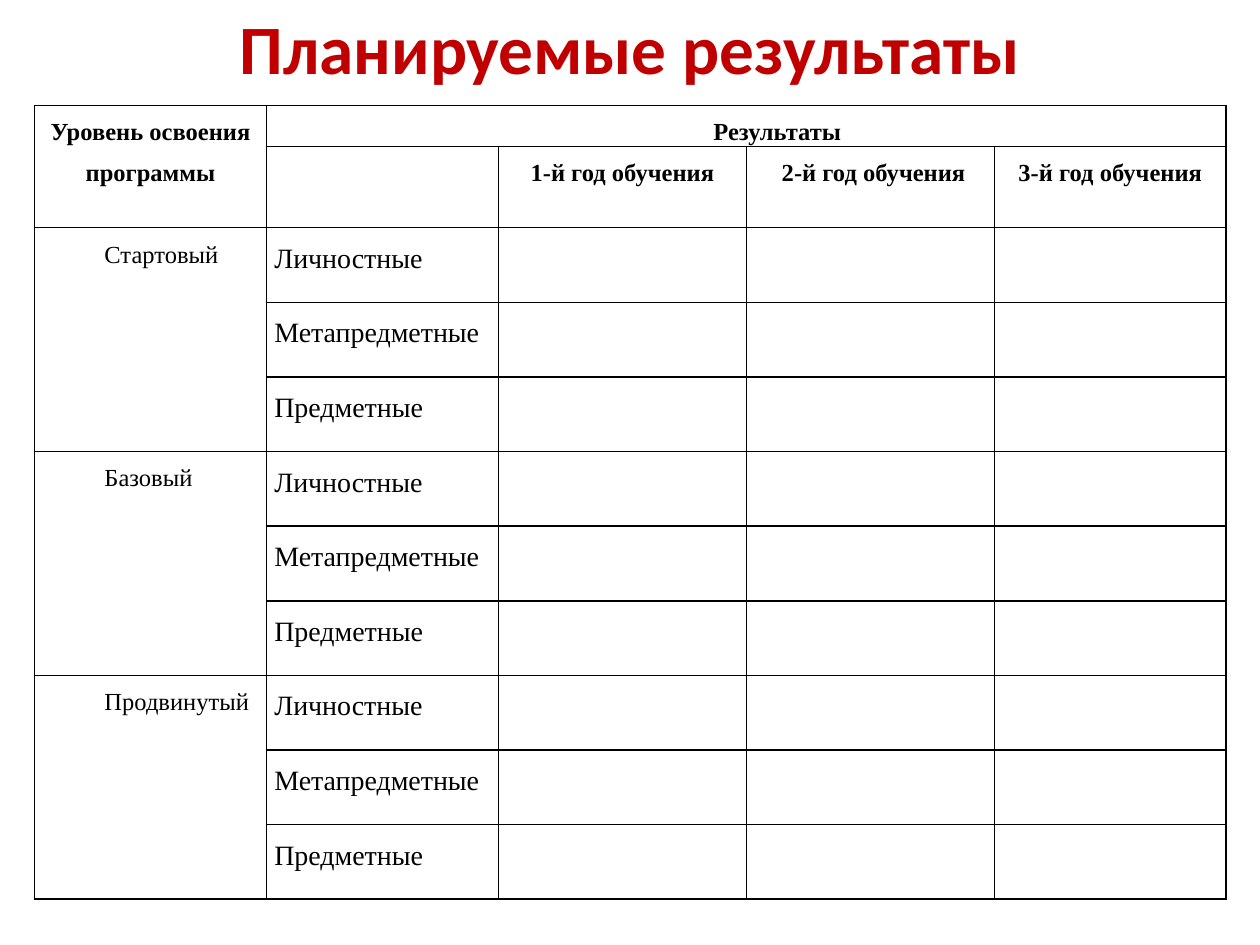
import pptx
import pptx.util
import pptx.dml.color
import pptx.enum.text
import pptx.oxml
import pptx.oxml.ns

Pt = pptx.util.Pt
RGB = pptx.dml.color.RGBColor.from_string
AL = pptx.enum.text.PP_ALIGN
COLORS = {"title": "C00000", "ink": "000000"}
INDENT = 35.4


def add_borders(cell):
    tcPr = cell._tc.get_or_add_tcPr()
    for i, side in enumerate(("lnL", "lnR", "lnT", "lnB")):
        ln = pptx.oxml.parse_xml(
            f'<a:{side} {pptx.oxml.ns.nsdecls("a")} w="{Pt(1)}"><a:solidFill>'
            f'<a:srgbClr val="{COLORS["ink"]}"/></a:solidFill></a:{side}>')
        tcPr.insert(i, ln)


def write(cell, text, size=14, bold=False, align=AL.LEFT, indent=0):
    p = cell.text_frame.paragraphs[0]
    p.text = text
    p.alignment = align
    p.line_spacing = 1.5
    if indent:
        pPr = p._p.get_or_add_pPr()
        pPr.set("marL", "0")
        pPr.set("indent", str(Pt(indent)))
    f = p.runs[0].font
    f.name, f.size, f.bold = "Times New Roman", Pt(size), bold
    f.color.rgb = RGB(COLORS["ink"])


prs = pptx.Presentation()
prs.slide_width, prs.slide_height = Pt(720), Pt(540)
s = prs.slides.add_slide(prs.slide_layouts[5])

# Title, lifted above the table by its bottom inset
sp = s.shapes.title
sp.left, sp.top, sp.width, sp.height = Pt(36), Pt(21.6), Pt(648), Pt(49.7)
tf = sp.text_frame
tf.text = "Планируемые результаты"
tf.margin_top, tf.margin_bottom = 0, Pt(40)
tf.vertical_anchor = pptx.enum.text.MSO_ANCHOR.MIDDLE
tf.paragraphs[0].alignment = AL.CENTER
f = tf.paragraphs[0].runs[0].font
f.name, f.size, f.bold = "Calibri", Pt(39.6), True
f.color.rgb = RGB(COLORS["title"])

# Table grid
levels = ["Стартовый", "Базовый", "Продвинутый"]
results = ["Личностные", "Метапредметные", "Предметные"]
years = ["1-й год обучения", " 2-й год обучения", "3-й год обучения"]
widths = [132.5, 132.5, 141.8, 141.8, 132.2]
heights = [23.4, 46.2] + [42.64] * (len(levels) * len(results))
tbl = s.shapes.add_table(len(heights), len(widths), Pt(19.8), Pt(60.3),
                         Pt(sum(widths)), Pt(sum(heights))).table
tbl.first_row = tbl.horz_banding = False
for col, w in zip(tbl.columns, widths):
    col.width = Pt(w)
for row, h in zip(tbl.rows, heights):
    row.height = Pt(h)
for cell in tbl.iter_cells():
    cell.fill.background()
    cell.margin_left = cell.margin_right = Pt(4.5)
    cell.margin_top = cell.margin_bottom = 0
    add_borders(cell)

# Header rows
tbl.cell(0, 0).merge(tbl.cell(1, 0))
tbl.cell(0, 1).merge(tbl.cell(0, 4))
write(tbl.cell(0, 0), "Уровень освоения программы", bold=True, align=AL.CENTER)
write(tbl.cell(0, 1), "Результаты", bold=True, align=AL.CENTER, indent=INDENT)
for c, year in enumerate(years, 2):
    write(tbl.cell(1, c), year, bold=True, align=AL.CENTER)

# One block of result rows for each level
for i, level in enumerate(levels):
    top = 2 + i * len(results)
    tbl.cell(top, 0).merge(tbl.cell(top + len(results) - 1, 0))
    write(tbl.cell(top, 0), level, indent=INDENT)
    for r, result in enumerate(results, top):
        write(tbl.cell(r, 1), result, size=16, align=AL.JUSTIFY)

prs.save("out.pptx")
